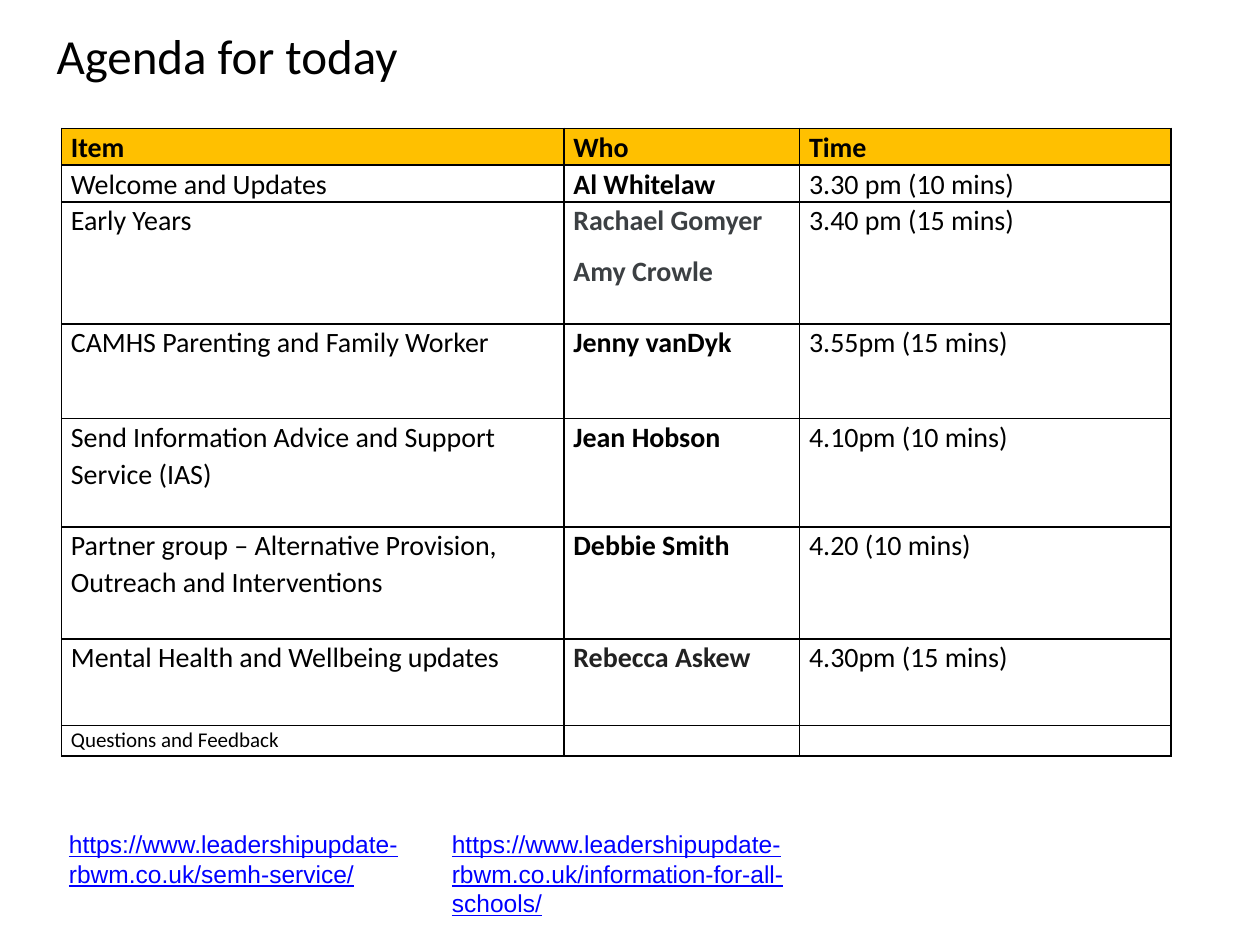
from lxml.etree import SubElement
from pptx import Presentation
from pptx.dml.color import RGBColor
from pptx.enum.text import MSO_ANCHOR as Anchor
from pptx.oxml.ns import qn
from pptx.util import Cm, Pt

BLACK, AMBER, BLUE = "000000", "FFC000", "0000FF"
DARK_GREY, CHARCOAL = "3C4043", "222222"

COLUMN_WIDTHS = [10.13, 4.75, 7.49]
ROW_HEIGHTS = [0.74, 0.74, 2.46, 1.91, 2.18, 2.26, 1.75, 0.61]
# item, people, time, colour of the people
AGENDA = [
    ("Welcome and Updates", ["Al Whitelaw"], "3.30 pm (10 mins)", BLACK),
    ("Early Years", ["Rachael Gomyer", "Amy Crowle"], "3.40 pm (15 mins)", DARK_GREY),
    ("CAMHS Parenting and Family Worker", ["Jenny vanDyk"], "3.55pm (15 mins)", BLACK),
    ("Send Information Advice and Support Service (IAS)", ["Jean Hobson"],
     "4.10pm (10 mins)", BLACK),
    ("Partner group – Alternative Provision, Outreach and Interventions",
     ["Debbie Smith"], "4.20 (10 mins)", BLACK),
    ("Mental Health and Wellbeing updates", ["Rebecca Askew"], "4.30pm (15 mins)", CHARCOAL),
]
LINKS = [
    (1.14, 1.45, "https://www.leadershipupdate-rbwm.co.uk/semh-service/"),
    (8.86, 2.06, "https://www.leadershipupdate-rbwm.co.uk/information-for-all-schools/"),
]


def rgb(value):
    return RGBColor.from_string(value)


def add_span(para, text, size=16, font="Calibri", color=BLACK, bold=False, underline=False):
    span = para.add_run()
    span.text = text
    span.font.size = Pt(size)
    span.font.name = font
    span.font.color.rgb = rgb(color)
    span.font.bold = bold
    span.font.underline = underline


def add_text(page, text, left, top, width, height, anchor=Anchor.TOP, **style):
    box = page.shapes.add_textbox(Cm(left), Cm(top), Cm(width), Cm(height))
    frame = box.text_frame
    frame.word_wrap = True
    frame.vertical_anchor = anchor
    add_span(frame.paragraphs[0], text, **style)


def set_borders(cell, color=BLACK, width=1):
    properties = cell._tc.get_or_add_tcPr()
    for side in ("a:lnL", "a:lnR", "a:lnT", "a:lnB"):
        line = SubElement(properties, qn(side), w=str(Pt(width)))
        fill = SubElement(line, qn("a:solidFill"))
        SubElement(fill, qn("a:srgbClr"), val=color)


def fill_cell(cell, lines, fill=None, size=16, **style):
    cell.margin_left = cell.margin_right = Cm(0.19)
    cell.margin_top = cell.margin_bottom = 0
    set_borders(cell)
    if fill:
        cell.fill.solid()
        cell.fill.fore_color.rgb = rgb(fill)
    else:
        cell.fill.background()
    frame = cell.text_frame
    for index, text in enumerate(lines):
        para = frame.add_paragraph() if index else frame.paragraphs[0]
        para.line_spacing = 1.07
        para.space_after = Pt(8)
        add_span(para, text, size=size, **style)
    if not lines:
        # keeps an empty cell from stretching its row
        SubElement(frame.paragraphs[0]._p, qn("a:endParaRPr"), sz=str(size * 100))


def add_agenda(page, left, top):
    table = page.shapes.add_table(
        len(ROW_HEIGHTS), len(COLUMN_WIDTHS), Cm(left), Cm(top),
        Cm(sum(COLUMN_WIDTHS)), Cm(sum(ROW_HEIGHTS))).table
    table.first_row = table.horz_banding = False
    for column, width in zip(table.columns, COLUMN_WIDTHS):
        column.width = Cm(width)
    for row, height in zip(table.rows, ROW_HEIGHTS):
        row.height = Cm(height)

    for column, heading in enumerate(["Item", "Who", "Time"]):
        fill_cell(table.cell(0, column), [heading], fill=AMBER, bold=True)
    for row, (item, people, time, color) in enumerate(AGENDA, start=1):
        fill_cell(table.cell(row, 0), [item])
        fill_cell(table.cell(row, 1), people, color=color, bold=True)
        fill_cell(table.cell(row, 2), [time])
    last = len(ROW_HEIGHTS) - 1
    for column, lines in enumerate([["Questions and Feedback"], [], []]):
        fill_cell(table.cell(last, column), lines, size=12)


def main():
    deck = Presentation()
    deck.slide_width, deck.slide_height = Cm(25.4), Cm(19.05)
    page = deck.slides.add_slide(deck.slide_layouts[6])
    add_text(page, "Agenda for today", 0.89, -0.38, 17.55, 2.97,
             anchor=Anchor.MIDDLE, size=28)
    add_agenda(page, 1.24, 2.59)
    for left, height, address in LINKS:
        add_text(page, address, left, 16.59, 7.87, height,
                 size=14, font="Arial", color=BLUE, underline=True)
    deck.save("out.pptx")


if __name__ == "__main__":
    main()
